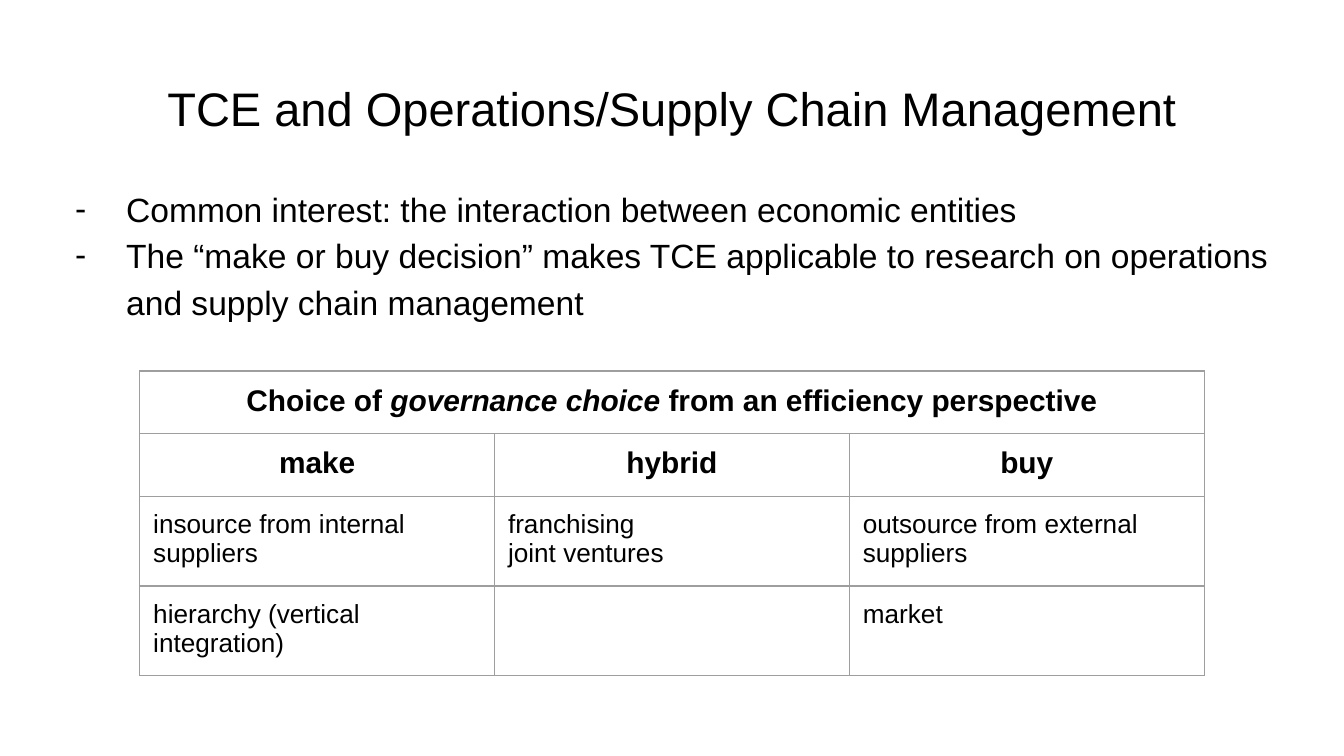
from lxml.etree import SubElement
from pptx import Presentation
from pptx.dml.color import RGBColor
from pptx.enum.text import MSO_ANCHOR, PP_ALIGN
from pptx.oxml.ns import qn
from pptx.util import Inches, Pt

COLORS = {"text": "000000", "border": "9E9E9E", "background": "FFFFFF"}
FONT = "Arial"
INSET = 0.1
TITLE = "TCE and Operations/Supply Chain Management"
POINTS = [
    "Common interest: the interaction between economic entities",
    "The “make or buy decision” makes TCE applicable to research on operations "
    "and supply chain management",
]
HEADING = [("Choice of ", False), ("governance choice", True),
           (" from an efficiency perspective", False)]
CHOICES = ["make", "hybrid", "buy"]
EXAMPLES = [
    [["insource from internal suppliers"], ["franchising", "joint ventures"],
     ["outsource from external suppliers"]],
    [["hierarchy (vertical integration)"], [], ["market"]],
]
HEADER_FORMAT = {"size": Pt(16), "bold": True}
BODY_FORMAT = {"size": Pt(14), "bold": False}


def add_run(paragraph, text, formats):
    run = paragraph.add_run()
    run.text = text
    for name, value in {"name": FONT, **formats}.items():
        setattr(run.font, name, value)
    run.font.color.rgb = RGBColor.from_string(COLORS["text"])


def set_insets(target):
    for side in ("left", "top", "right", "bottom"):
        setattr(target, f"margin_{side}", Inches(INSET))


def add_text_frame(slide, box):
    text_frame = slide.shapes.add_textbox(*map(Inches, box)).text_frame
    text_frame.word_wrap = True
    set_insets(text_frame)
    return text_frame


def fill_paragraphs(text_frame, lines):
    """Yield one paragraph for each line, starting with the existing one."""
    for index, line in enumerate(lines):
        yield text_frame.add_paragraph() if index else text_frame.paragraphs[0], line


def add_title(slide, box):
    text_frame = add_text_frame(slide, box)
    text_frame.vertical_anchor = MSO_ANCHOR.TOP
    paragraph = text_frame.paragraphs[0]
    paragraph.alignment = PP_ALIGN.CENTER
    add_run(paragraph, TITLE, {"size": Pt(25.2)})


def add_points(slide, box):
    text_frame = add_text_frame(slide, box)
    for paragraph, point in fill_paragraphs(text_frame, POINTS):
        paragraph.line_spacing = 1.15
        add_run(paragraph, point, {"size": Pt(18)})
        properties = paragraph._p.get_or_add_pPr()
        properties.set("marL", str(Inches(0.5)))
        properties.set("indent", str(Inches(-0.38)))
        color = SubElement(properties, qn("a:buClr"))
        SubElement(color, qn("a:srgbClr"), val=COLORS["text"])
        SubElement(properties, qn("a:buFont"), typeface=FONT)
        SubElement(properties, qn("a:buChar"), char="-")


def style_cell(cell):
    set_insets(cell)
    properties = cell._tc.get_or_add_tcPr()
    for side in ("lnL", "lnR", "lnT", "lnB"):
        line = SubElement(properties, qn(f"a:{side}"), w=str(Pt(0.75)))
        fill = SubElement(line, qn("a:solidFill"))
        SubElement(fill, qn("a:srgbClr"), val=COLORS["border"])
    cell.fill.background()


def add_governance_table(slide, box, row_height):
    """Rows start at row_height and grow to fit their text."""
    row_count, column_count = 2 + len(EXAMPLES), len(CHOICES)
    table = slide.shapes.add_table(row_count, column_count, *map(Inches, box)).table
    table.first_row = table.horz_banding = False
    for row in table.rows:
        row.height = Inches(row_height)
    for column in table.columns:
        column.width = Inches(box[2] / column_count)
    for cell in table.iter_cells():
        style_cell(cell)

    table.cell(0, 0).merge(table.cell(0, column_count - 1))
    heading = table.cell(0, 0).text_frame.paragraphs[0]
    heading.alignment = PP_ALIGN.CENTER
    for text, italic in HEADING:
        add_run(heading, text, {**HEADER_FORMAT, "italic": italic})

    for column, choice in enumerate(CHOICES):
        paragraph = table.cell(1, column).text_frame.paragraphs[0]
        paragraph.alignment = PP_ALIGN.CENTER
        add_run(paragraph, choice, HEADER_FORMAT)
    for row, examples in enumerate(EXAMPLES, start=2):
        for column, lines in enumerate(examples):
            text_frame = table.cell(row, column).text_frame
            for paragraph, line in fill_paragraphs(text_frame, lines):
                add_run(paragraph, line, BODY_FORMAT)


def main():
    presentation = Presentation()
    presentation.slide_width = Inches(10)
    presentation.slide_height = presentation.slide_width * 9 // 16
    slide = presentation.slides.add_slide(presentation.slide_layouts[6])
    background = slide.background.fill
    background.solid()
    background.fore_color.rgb = RGBColor.from_string(COLORS["background"])
    add_title(slide, (0, 0.49, 10, 0.63))
    add_points(slide, (0.34, 1.26, 9.32, 3.74))
    add_governance_table(slide, (1.04, 2.76, 7.92, 1.68), 0.42)
    presentation.save("out.pptx")


if __name__ == "__main__":
    main()
